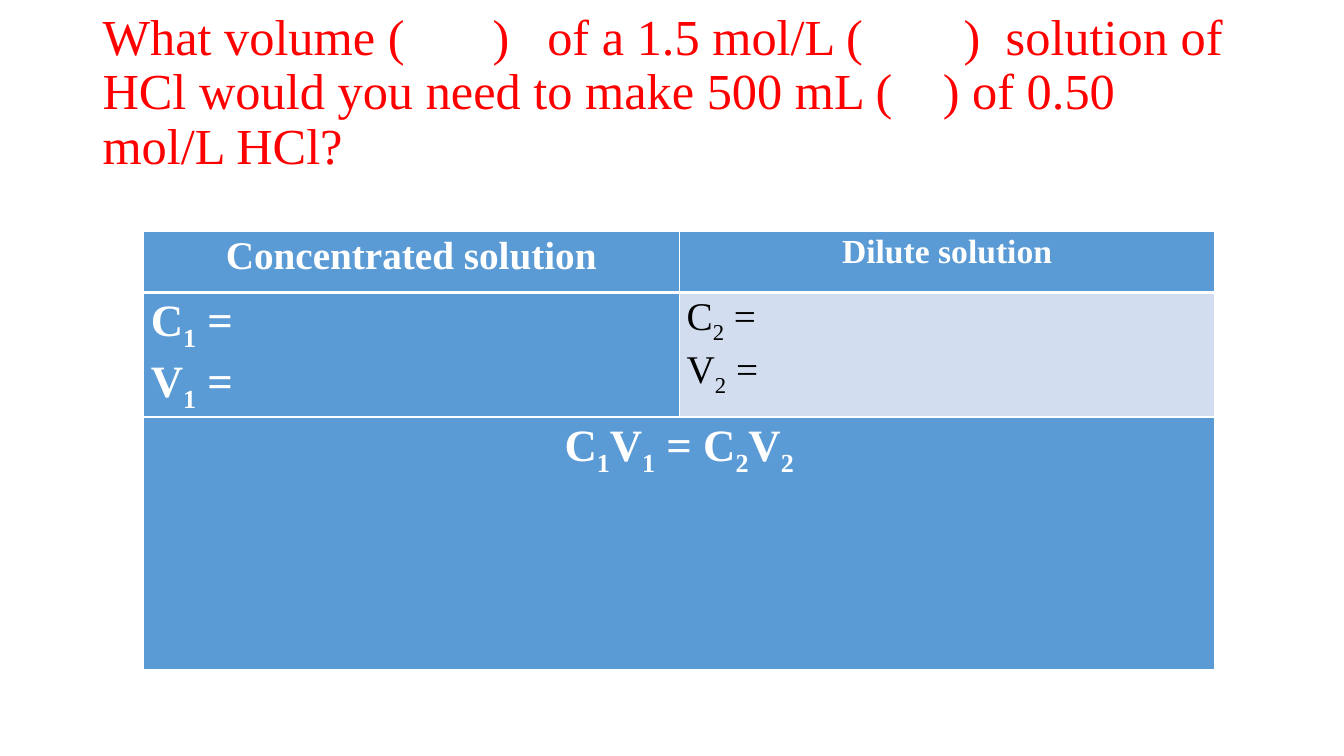
import itertools

import lxml.etree
import pptx
import pptx.dml.color
import pptx.enum.text
import pptx.oxml.ns
import pptx.util

Cm = pptx.util.Cm
Pt = pptx.util.Pt
ALIGN = pptx.enum.text.PP_ALIGN
FONT = "Times New Roman"
BLUE, PALE_BLUE = "5B9BD5", "D2DEEF"
WHITE, BLACK, RED = "FFFFFF", "000000", "FF0000"


def color(hex_value):
    return pptx.dml.color.RGBColor.from_string(hex_value)


def format_run(run, size, hex_value, bold):
    run.font.name = FONT
    run.font.size = Pt(size)
    run.font.bold = bold
    run.font.color.rgb = color(hex_value)


def add_formula(paragraph, text, size, hex_value, bold):
    """Write the text; digits become subscripts."""
    for is_digit, letters in itertools.groupby(text, str.isdigit):
        run = paragraph.add_run()
        run.text = "".join(letters)
        format_run(run, size, hex_value, bold)
        if is_digit:
            run._r.get_or_add_rPr().set("baseline", "-25000")


def set_borders(cell, top, bottom):
    """Draw white borders; they precede the fill in the cell properties."""
    properties = cell._tc.get_or_add_tcPr()
    widths = {"lnL": 1, "lnR": 1, "lnT": top, "lnB": bottom}
    for position, (tag, width) in enumerate(widths.items()):
        line = lxml.etree.Element(pptx.oxml.ns.qn("a:" + tag), w=str(Pt(width)))
        fill = lxml.etree.SubElement(line, pptx.oxml.ns.qn("a:solidFill"))
        lxml.etree.SubElement(fill, pptx.oxml.ns.qn("a:srgbClr"), val=WHITE)
        properties.insert(position, line)


def fill_cell(cell, lines, size, align, fill=BLUE, text_color=WHITE, bold=True):
    cell.fill.solid()
    cell.fill.fore_color.rgb = color(fill)
    cell.margin_left = cell.margin_right = Cm(0.19)
    cell.margin_top = cell.margin_bottom = 0
    for number, line in enumerate(lines):
        text_frame = cell.text_frame
        paragraph = text_frame.add_paragraph() if number else text_frame.paragraphs[0]
        paragraph.alignment = align
        paragraph.line_spacing = 1.07
        add_formula(paragraph, line, size, text_color, bold)


def add_question(slide, left, top, width, height):
    title = slide.shapes.title
    title.left, title.top, title.width, title.height = left, top, width, height
    text_frame = title.text_frame
    text_frame.text = (
        "What volume (       )   of a 1.5 mol/L (        )  solution of HCl "
        "would you need to make 500 mL (    ) of 0.50 mol/L HCl?"
    )
    text_frame.word_wrap = True
    text_frame.auto_size = pptx.enum.text.MSO_AUTO_SIZE.NONE
    text_frame.vertical_anchor = pptx.enum.text.MSO_ANCHOR.MIDDLE
    text_frame.margin_bottom = Cm(1.5)  # lifts the question above the box centre
    paragraph = text_frame.paragraphs[0]
    paragraph.alignment = ALIGN.LEFT
    paragraph.line_spacing = 0.9
    format_run(paragraph.runs[0], 36, RED, False)


def add_dilution_table(slide, left, top, width, row_heights):
    height = sum(row_heights)
    table = slide.shapes.add_table(3, 2, left, top, width, height).table
    for column in table.columns:
        column.width = width // 2
    for row, row_height in zip(table.rows, row_heights):
        row.height = row_height
    table.cell(2, 0).merge(table.cell(2, 1))

    # Headings
    fill_cell(table.cell(0, 0), ["Concentrated solution"], 28, ALIGN.CENTER)
    fill_cell(table.cell(0, 1), ["Dilute solution"], 24, ALIGN.CENTER)

    # Known values
    fill_cell(table.cell(1, 0), ["C1 =", "V1 ="], 32, ALIGN.LEFT)
    fill_cell(table.cell(1, 1), ["C2 =", "V2 ="], 28, ALIGN.LEFT,
              PALE_BLUE, BLACK, False)

    # Dilution equation
    fill_cell(table.cell(2, 0), ["C1V1 = C2V2"], 32, ALIGN.CENTER)

    # Borders, thicker below the headings
    for row, (upper, lower) in enumerate([(1, 3), (3, 1), (1, 1)]):
        for column in range(2):
            set_borders(table.cell(row, column), upper, lower)


def main():
    presentation = pptx.Presentation()
    presentation.slide_width = Cm(33.87)
    presentation.slide_height = Cm(19.05)
    slide = presentation.slides.add_slide(presentation.slide_layouts[5])
    add_question(slide, Cm(2.33), Cm(1.01), Cm(29.21), Cm(4.06))
    add_dilution_table(slide, Cm(3.61), Cm(5.83), Cm(27.01),
                       [Cm(1.54), Cm(3.14), Cm(6.37)])
    presentation.save("out.pptx")


if __name__ == "__main__":
    main()
